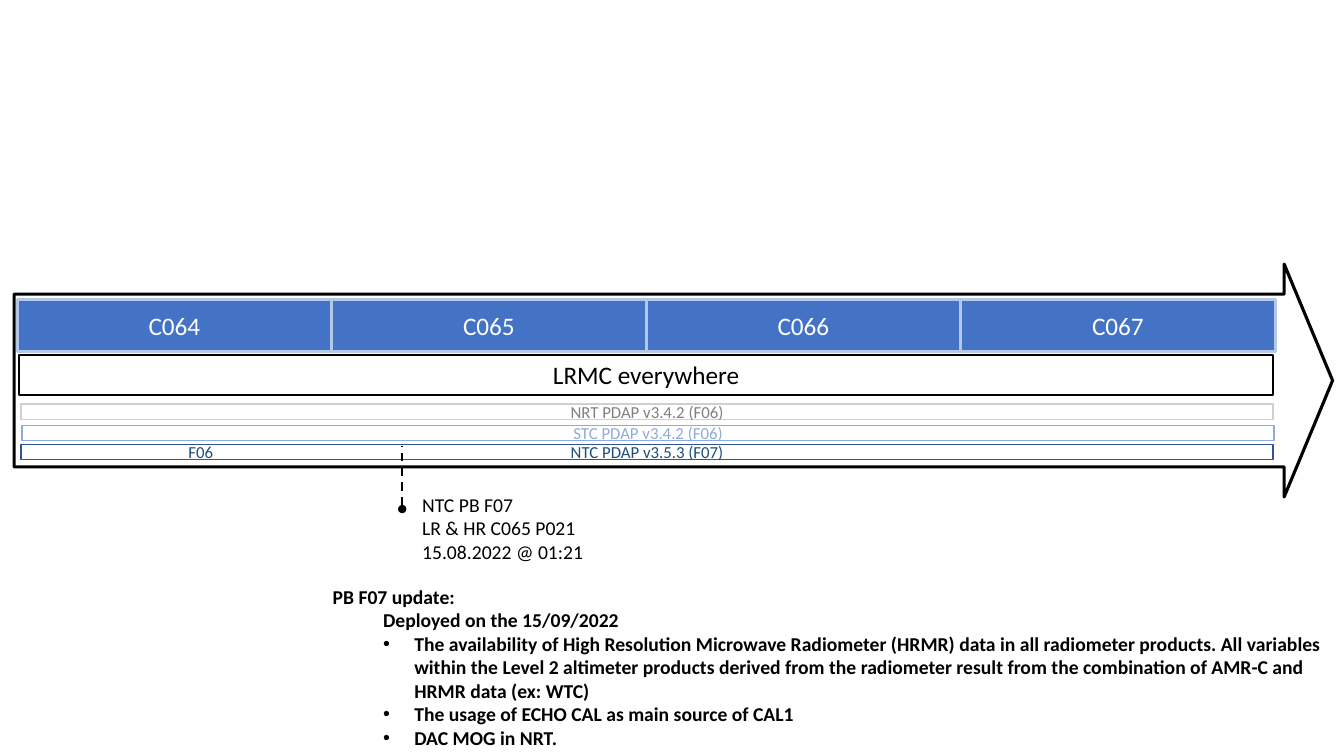
from dataclasses import dataclass

from lxml.etree import SubElement
from pptx import Presentation
from pptx.dml.color import RGBColor
from pptx.enum.dml import MSO_LINE
from pptx.enum.shapes import MSO_CONNECTOR, MSO_SHAPE
from pptx.enum.text import MSO_ANCHOR, MSO_AUTO_SIZE, PP_ALIGN
from pptx.oxml.ns import qn
from pptx.util import Inches, Pt

SLIDE_WIDTH, SLIDE_HEIGHT = Inches(13.33), Inches(7.5)
COLUMN, ROW = SLIDE_WIDTH / 160, SLIDE_HEIGHT / 90
FONT = "Calibri"
COLORS = {
    "black": "000000",
    "white": "FFFFFF",
    "cycle": "4472C4",
    "cycle_edge": "B4C7E7",
    "nrt_edge": "D0CECE",
    "nrt_text": "808080",
    "stc": "8FAADC",
    "ntc_edge": "2F5597",
    "ntc_text": "1F4E79",
}
CYCLES = ["C064", "C065", "C066", "C067"]
PRODUCTS = [
    ("NRT PDAP v3.4.2 (F06)", 0.84, 16.68, "nrt_edge", "nrt_text"),
    ("STC PDAP v3.4.2 (F06)", 0.96, 19.2, "stc", "stc"),
    ("NTC PDAP v3.5.3 (F07)", 0.84, 21.48, "ntc_edge", "ntc_text"),
]
MILESTONE = ["NTC PB F07", "LR & HR C065 P021", "15.08.2022 @ 01:21"]
UPDATE = [
    ("PB F07 update:", 0, 0, 0),
    ("Deployed on the 15/09/2022", 1, 0.5, 0),
    ("The availability of High Resolution Microwave Radiometer (HRMR) data in all radiometer "
     "products. All variables within the Level 2 altimeter products derived from the radiometer "
     "result from the combination of AMR-C and HRMR data (ex: WTC)", 1, 0.81, -0.31),
    ("The usage of ECHO CAL as main source of CAL1", 1, 0.81, -0.31),
    ("DAC MOG in NRT.", 1, 0.81, -0.31),
]


@dataclass
class Box:
    left: float
    top: float
    width: float
    height: float

    def inner(self, left, top, width, height):
        return Box(self.left + left, self.top + top, width, height)

    def lengths(self):
        return (round(self.left * COLUMN), round(self.top * ROW),
                round(self.width * COLUMN), round(self.height * ROW))


def color(name):
    return RGBColor.from_string(COLORS[name])


def set_format(target, values):
    for name, value in values.items():
        setattr(target, name, value)


def write_lines(frame, lines, size, text_color, align=PP_ALIGN.LEFT, anchor=MSO_ANCHOR.TOP, bold=False):
    set_format(frame, {"word_wrap": True, "auto_size": MSO_AUTO_SIZE.NONE, "vertical_anchor": anchor})
    for index, line in enumerate(lines):
        paragraph = frame.add_paragraph() if index else frame.paragraphs[0]
        set_format(paragraph, {"alignment": align, "space_before": Pt(0)})
        run = paragraph.add_run()
        run.text = line
        set_format(run.font, {"name": FONT, "size": Pt(size), "bold": bold})
        run.font.color.rgb = color(text_color)


def add_block(slide, kind, box, fill, edge, line_width):
    shape = slide.shapes.add_shape(kind, *box.lengths())
    shape.shadow.inherit = False
    shape.fill.solid()
    shape.fill.fore_color.rgb = color(fill)
    shape.line.color.rgb = color(edge)
    shape.line.width = Pt(line_width)
    return shape


def add_bar(slide, box, text, size, fill, edge, line_width, text_color, anchor=MSO_ANCHOR.MIDDLE):
    bar = add_block(slide, MSO_SHAPE.RECTANGLE, box, fill, edge, line_width)
    write_lines(bar.text_frame, [text], size, text_color, PP_ALIGN.CENTER, anchor)


def add_label(slide, box, lines, size, text_color):
    label = slide.shapes.add_textbox(*box.lengths())
    write_lines(label.text_frame, lines, size, text_color)


def add_timeline(slide, box):
    arrow = add_block(slide, MSO_SHAPE.RIGHT_ARROW, box, "white", "black", 2.25)
    arrow.adjustments[0], arrow.adjustments[1] = 0.742, 0.208
    cycle_width = 37.44
    for index, cycle in enumerate(CYCLES):
        cell = box.inner(0.36 + index * cycle_width, 4.2, cycle_width, 6.24)
        add_bar(slide, cell, cycle, 18, "cycle", "cycle_edge", 2.25, "white")
    add_bar(slide, box.inner(0.6, 10.8, 149.28, 4.8), "LRMC everywhere", 18,
            "white", "black", 1.5, "black", MSO_ANCHOR.TOP)
    for text, left, top, edge, text_color in PRODUCTS:
        add_bar(slide, box.inner(left, top, 149.04, 1.8), text, 12, "white", edge, 1, text_color)
    add_label(slide, box.inner(19.56, 20.52, 7.2, 3.6), ["F06"], 12, "ntc_text")


def add_milestone(slide, box):
    left, top, _, stem = box.inner(0, 0, 0, 7.56).lengths()
    connector = slide.shapes.add_connector(MSO_CONNECTOR.STRAIGHT, left, top + stem, left, top)
    connector.line.color.rgb = color("black")
    set_format(connector.line, {"width": Pt(1.5), "dash_style": MSO_LINE.DASH})
    SubElement(connector.line._get_or_add_ln(), qn("a:headEnd"), type="oval")
    SubElement(connector._element.spPr, qn("a:effectLst"))
    add_label(slide, box.inner(1.2, 5.04, 26.16, 9.72), MILESTONE, 14, "black")


def add_update(slide, box):
    body = slide.placeholders[1]
    set_format(body, dict(zip(("left", "top", "width", "height"), box.lengths())))
    write_lines(body.text_frame, [item[0] for item in UPDATE], 14, "black", bold=True)
    for paragraph, (_, level, margin, indent) in zip(body.text_frame.paragraphs, UPDATE):
        paragraph.level = level
        properties = paragraph._p.get_or_add_pPr()
        properties.set("marL", str(Inches(margin)))
        properties.set("indent", str(Inches(indent)))
        if indent:
            SubElement(properties, qn("a:buFont"), typeface="Arial")
            SubElement(properties, qn("a:buChar"), char="•")
        else:
            SubElement(properties, qn("a:buNone"))


def main():
    presentation = Presentation()
    set_format(presentation, {"slide_width": SLIDE_WIDTH, "slide_height": SLIDE_HEIGHT})
    slide = presentation.slides.add_slide(presentation.slide_layouts[1])
    title = slide.shapes.title.element
    title.getparent().remove(title)
    add_timeline(slide, Box(1.68, 31.44, 156.96, 27.72))
    add_milestone(slide, Box(47.88, 53.04, 27.36, 14.76))
    add_update(slide, Box(38.4, 69, 123.12, 21))
    presentation.save("out.pptx")


if __name__ == "__main__":
    main()
